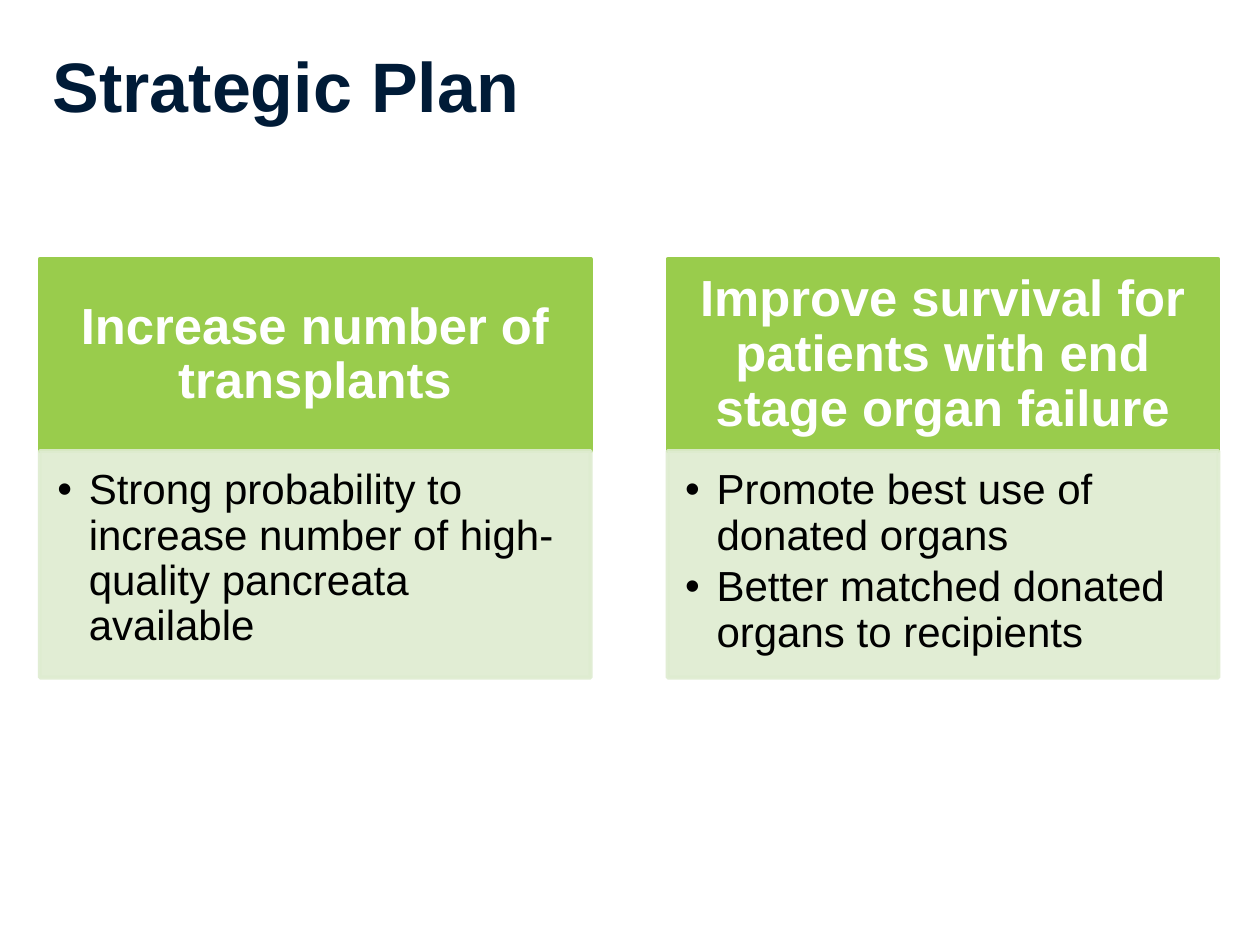
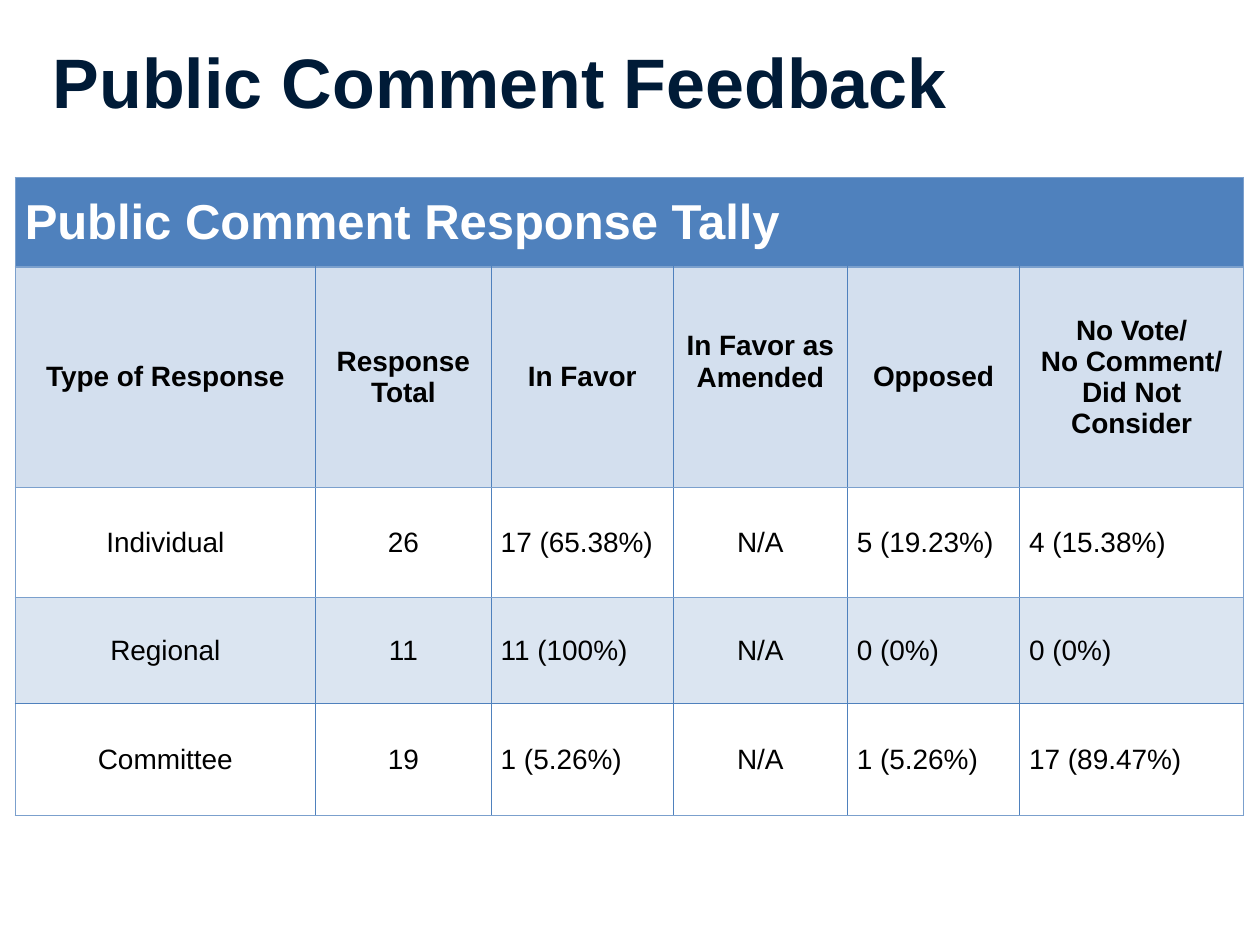
"""Builds the strategic plan and public comment slides."""
from collections import namedtuple
from dataclasses import dataclass

from lxml import etree
from pptx import Presentation
from pptx import util as u
from pptx.dml.color import RGBColor
from pptx.enum import shapes, text
from pptx.oxml.ns import qn

Box = namedtuple("Box", "left top width height")
ALIGN = text.PP_ALIGN
MIDDLE = text.MSO_ANCHOR.MIDDLE


@dataclass(frozen=True)
class Theme:
    """Colours and type sizes of the deck."""
    font: str = "Arial"
    navy: str = "001B37"
    black: str = "000000"
    white: str = "FFFFFF"
    goal_green: str = "99CC4C"
    detail_green: str = "DEECD0"
    band_blue: str = "4F81BD"
    rule_blue: str = "7BA0CD"
    heading_blue: str = "D3DFEE"
    row_blue: str = "DBE5F1"
    title_size: int = 40
    goal_size: int = 29
    tally_size: int = 28
    detail_size: int = 24
    cell_size: int = 16


THEME = Theme()

GOALS = [
    ("Increase number of transplants",
     ["Strong probability to increase number of high-quality pancreata available"]),
    ("Improve survival for patients with end stage organ failure",
     ["Promote best use of donated organs",
      "Better matched donated organs to recipients"]),
]

TALLY_TITLE = "Public Comment Response Tally"
TALLY_HEADINGS = ["Type of Response", "Response Total", "In Favor", "In Favor as Amended",
                  "Opposed", "No Vote/\nNo Comment/ Did Not Consider"]
TALLY_RESPONSES = [
    ["Individual", "26", "17 (65.38%)", "N/A", "5 (19.23%)", "4 (15.38%)"],
    ["Regional", "11", "11 (100%)", "N/A", "0 (0%)", "0 (0%)"],
    ["Committee", "19", "1 (5.26%)", "N/A", "1 (5.26%)", "17 (89.47%)"],
]
COLUMN_WIDTHS = [171.5, 100.5, 104, 99.5, 98.5, 128]
ROW_HEIGHTS = [51, 126, 63, 60.5, 64]
AMENDED_COLUMN = 3
AMENDED_DROP = 36.5


def rgb(colour):
    """Turn a hex string into a colour."""
    return RGBColor.from_string(colour)


def set_font(paragraph, size, colour, bold=False):
    """Set the font of a whole paragraph."""
    font = paragraph.font
    font.name, font.size, font.bold = THEME.font, u.Pt(size), bold
    font.color.rgb = rgb(colour)


def set_insets(holder, left, top, right, bottom):
    """Set the inner margins of a text frame or a table cell."""
    holder.margin_left, holder.margin_top = u.Pt(left), u.Pt(top)
    holder.margin_right, holder.margin_bottom = u.Pt(right), u.Pt(bottom)


def add_titled_slide(deck, title_text, box):
    """Add a title-only slide and format its title."""
    slide = deck.slides.add_slide(deck.slide_layouts[5])
    title = slide.shapes.title
    title.left, title.top, title.width, title.height = map(u.Pt, box)
    title.text_frame.text = title_text
    title.text_frame.vertical_anchor = MIDDLE
    heading = title.text_frame.paragraphs[0]
    heading.alignment = ALIGN.LEFT
    set_font(heading, THEME.title_size, THEME.navy, bold=True)
    return slide


def add_panel(slide, box, colour, insets, anchor, lines):
    """Add a filled rectangle holding lines of text and return it."""
    panel = slide.shapes.add_shape(shapes.MSO_SHAPE.RECTANGLE, *map(u.Pt, box))
    panel.shadow.inherit = False
    panel.fill.solid()
    panel.fill.fore_color.rgb = rgb(colour)
    panel.line.color.rgb = rgb(colour)
    panel.line.width = u.Pt(2.25)
    frame = panel.text_frame
    frame.word_wrap = True
    frame.vertical_anchor = anchor
    set_insets(frame, *insets)
    frame.text = "\n".join(lines)
    for paragraph in frame.paragraphs:
        paragraph.line_spacing = 0.9
    return panel


def make_bullet(paragraph, indent):
    """Give a paragraph a round bullet with a hanging indent."""
    properties = paragraph._p.get_or_add_pPr()
    properties.set("marL", str(u.Pt(indent)))
    properties.set("indent", str(-u.Pt(indent)))
    etree.SubElement(properties, qn("a:buFont"), typeface=THEME.font)
    etree.SubElement(properties, qn("a:buChar"), char="•")


def set_opacity(panel, percent):
    """Make the fill and line of a panel partly transparent."""
    for colour in panel._element.spPr.iter(qn("a:srgbClr")):
        etree.SubElement(colour, qn("a:alpha"), val=str(percent * 1000))


def add_goal(slide, box, goal, details):
    """Add a goal heading with its bulleted details beneath."""
    heading_height = 109.75
    heading = add_panel(slide, Box(box.left, box.top, box.width, heading_height),
                        THEME.goal_green, (16.5, 9.5, 16.5, 9.5), MIDDLE, [goal])
    heading_line = heading.text_frame.paragraphs[0]
    heading_line.alignment = ALIGN.CENTER
    set_font(heading_line, THEME.goal_size, THEME.white, bold=True)

    body = add_panel(slide, Box(box.left, box.top + heading_height, box.width,
                                box.height - heading_height),
                     THEME.detail_green, (10, 10, 13.5, 15), text.MSO_ANCHOR.TOP, details)
    set_opacity(body, 90)
    for detail in body.text_frame.paragraphs:
        detail.alignment = ALIGN.LEFT
        detail.space_after = u.Pt(3.6)
        make_bullet(detail, 18)
        set_font(detail, THEME.detail_size, THEME.black)


def add_goals(slide, box, gap):
    """Lay the goals side by side across a box."""
    width = (box.width - gap * (len(GOALS) - 1)) / len(GOALS)
    for index, (goal, details) in enumerate(GOALS):
        left = box.left + index * (width + gap)
        add_goal(slide, Box(left, box.top, width, box.height), goal, details)


def set_borders(cell, colours):
    """Draw the left, right, top and bottom borders of a cell."""
    properties = cell._tc.get_or_add_tcPr()
    for side, colour in zip("LRTB", colours):
        line = etree.SubElement(properties, qn(f"a:ln{side}"), w=str(u.Pt(1)))
        fill = etree.SubElement(line, qn("a:solidFill"))
        etree.SubElement(fill, qn("a:srgbClr"), val=colour)


def border_colours(row, column):
    """Return the border colours of a cell: dark between columns, light outside."""
    dark, light = THEME.band_blue, THEME.rule_blue
    last_row, last_column = len(ROW_HEIGHTS) - 1, len(COLUMN_WIDTHS) - 1
    return (light if row == 0 or column == 0 else dark,
            light if row == 0 or column == last_column else dark,
            dark if row == last_row else light,
            dark if row == last_row - 1 else light)


def fill_cell(cell, words, fill, size, colour, bold, alignment):
    """Write and format one table cell."""
    cell.fill.solid()
    cell.fill.fore_color.rgb = rgb(fill)
    cell.vertical_anchor = MIDDLE
    set_insets(cell, 5.4, 0, 5.4, 0)
    cell.text = words
    for paragraph in cell.text_frame.paragraphs:
        paragraph.alignment = alignment
        set_font(paragraph, size, colour, bold)


def add_tally(slide, box):
    """Add the table of responses in a box."""
    tally = slide.shapes.add_table(len(ROW_HEIGHTS), len(COLUMN_WIDTHS),
                                   *map(u.Pt, box)).table
    tally.first_row = tally.horz_banding = False
    for column, width in zip(tally.columns, COLUMN_WIDTHS):
        column.width = u.Pt(width)
    for row, height in zip(tally.rows, ROW_HEIGHTS):
        row.height = u.Pt(height)
    for row in range(len(ROW_HEIGHTS)):
        for column in range(len(COLUMN_WIDTHS)):
            set_borders(tally.cell(row, column), border_colours(row, column))

    banner = tally.cell(0, 0)
    banner.merge(tally.cell(0, len(COLUMN_WIDTHS) - 1))
    fill_cell(banner, TALLY_TITLE, THEME.band_blue, THEME.tally_size, THEME.white,
              True, ALIGN.JUSTIFY)
    for column, heading in enumerate(TALLY_HEADINGS):
        fill_cell(tally.cell(1, column), heading, THEME.heading_blue, THEME.cell_size,
                  THEME.black, True, ALIGN.CENTER)
    amended = tally.cell(1, AMENDED_COLUMN)
    amended.vertical_anchor = text.MSO_ANCHOR.TOP
    amended.margin_top = u.Pt(AMENDED_DROP)

    for row, response in enumerate(TALLY_RESPONSES, start=2):
        fill = THEME.row_blue if row % 2 else THEME.white
        for column, value in enumerate(response):
            alignment = ALIGN.JUSTIFY if "%" in value else ALIGN.CENTER
            fill_cell(tally.cell(row, column), value, fill, THEME.cell_size,
                      THEME.black, False, alignment)


def main():
    """Build and save the deck."""
    deck = Presentation()
    deck.slide_width, deck.slide_height = u.Pt(720), u.Pt(540)

    plan = add_titled_slide(deck, "Strategic Plan", Box(23, -21.5, 688, 139))
    add_goals(plan, Box(22.75, 148, 673.5, 239.25), gap=44)

    feedback = add_titled_slide(deck, "Public Comment Feedback", Box(23, 12.5, 688, 67))
    add_tally(feedback, Box(8.75, 101.5, sum(COLUMN_WIDTHS), sum(ROW_HEIGHTS)))

    deck.save("out.pptx")


if __name__ == "__main__":
    main()
